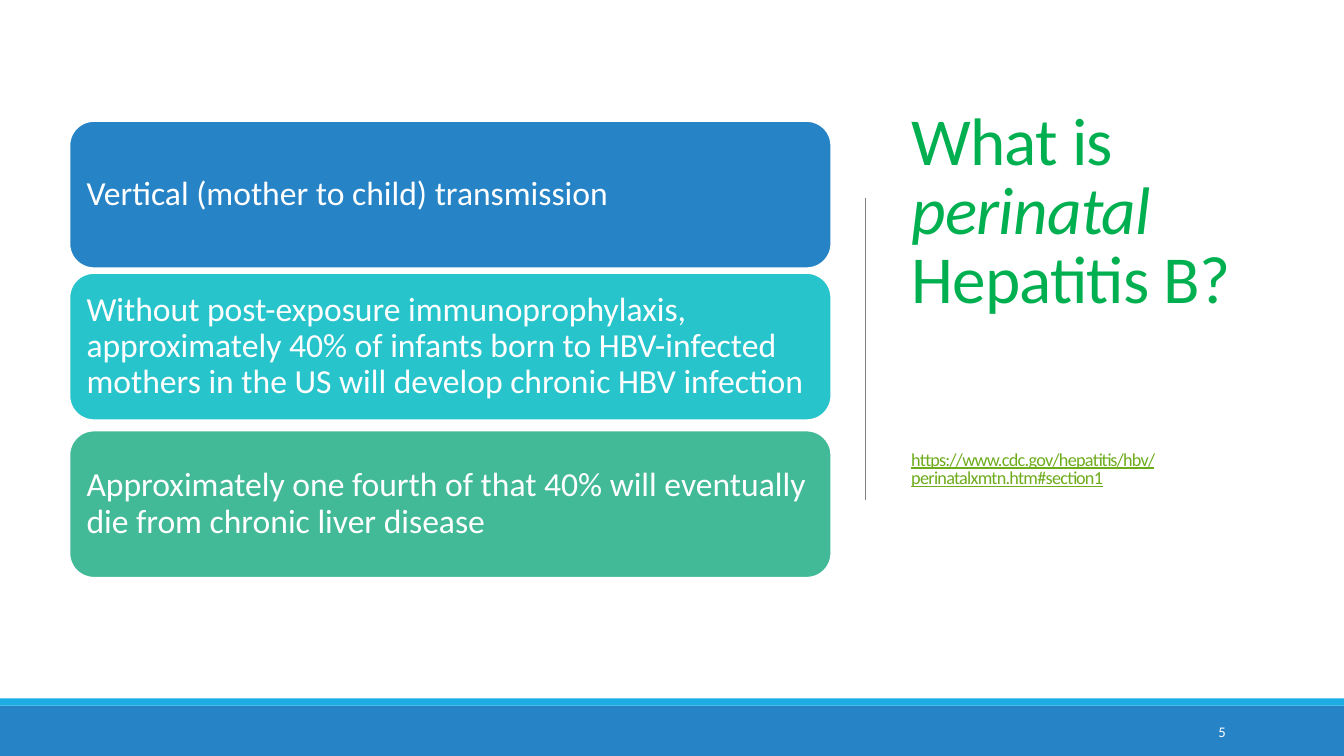
from lxml import etree
from pptx import Presentation
from pptx.dml.color import RGBColor
from pptx.enum import shapes, text
from pptx.oxml import ns
from pptx.util import Cm, Pt

BLUE = RGBColor(0x26, 0x83, 0xC6)
SKY = RGBColor(0x1C, 0xAD, 0xE4)
TURQUOISE = RGBColor(0x28, 0xC4, 0xCC)
TEAL = RGBColor(0x42, 0xBA, 0x97)
GREEN = RGBColor(0x00, 0xB0, 0x50)
LINK_GREEN = RGBColor(0x6E, 0xAC, 0x1C)
GREY = RGBColor(0x80, 0x80, 0x80)
WHITE = RGBColor(0xFF, 0xFF, 0xFF)

SLIDE_WIDTH = Cm(33.87)


def format_run(run, size, color):
    run.font.name = "Calibri"
    run.font.size = Pt(size)
    run.font.color.rgb = color


def add_filled_shape(kind, left, top, width, height, color):
    shape = slide.shapes.add_shape(kind, left, top, width, height)
    shape.shadow.inherit = False
    shape.fill.solid()
    shape.fill.fore_color.rgb = color
    shape.line.fill.background()
    return shape


presentation = Presentation()
presentation.slide_width = SLIDE_WIDTH
presentation.slide_height = Cm(19.05)
slide = presentation.slides.add_slide(presentation.slide_layouts[5])

# Footer bands
for top, height, color in ((17.78, 1.27, BLUE), (17.6, 0.18, SKY)):
    add_filled_shape(shapes.MSO_SHAPE.RECTANGLE, 0, Cm(top), SLIDE_WIDTH, Cm(height), color)

# Divider
divider = slide.shapes.add_connector(
    shapes.MSO_CONNECTOR.STRAIGHT, Cm(21.82), Cm(4.98), Cm(21.82), Cm(12.6))
divider.line.color.rgb = GREY
divider.line.width = Pt(0.5)
etree.SubElement(divider._element.spPr, ns.qn("a:effectLst"))

# Title with its source link
title = slide.shapes.title
title.left, title.top, title.width, title.height = Cm(22.71), Cm(1.75), Cm(9.37), Cm(14.05)
frame = title.text_frame
frame.word_wrap = True
frame.auto_size = text.MSO_AUTO_SIZE.NONE
frame.vertical_anchor = text.MSO_ANCHOR.TOP
frame.margin_top = Cm(1.05)
heading = frame.paragraphs[0]
for words in ("What is ", "perinatal", " Hepatitis B?"):
    run = heading.add_run()
    run.text = words
    format_run(run, 48, GREEN)
    run.font.italic = words == "perinatal"
source = frame.add_paragraph()
source.text = "https://www.cdc.gov/hepatitis/hbv/perinatalxmtn.htm#section1"
source.space_before = Pt(96)
format_run(source.runs[0], 13, LINK_GREEN)
source.runs[0].font.underline = True
for paragraph in frame.paragraphs:
    paragraph.alignment = text.PP_ALIGN.LEFT
    paragraph.line_spacing = 0.85
    for run in paragraph.runs:
        run.font._element.set("spc", "-50")

# Fact boxes
facts = (
    (3.05, BLUE, "Vertical (mother to child) transmission"),
    (6.88, TURQUOISE, "Without post-exposure immunoprophylaxis, approximately 40% of infants "
     "born to HBV-infected mothers in the US will develop chronic HBV infection"),
    (10.85, TEAL, "Approximately one fourth of that 40% will eventually die from "
     "chronic liver disease"),
)
for top, color, fact in facts:
    box = add_filled_shape(
        shapes.MSO_SHAPE.ROUNDED_RECTANGLE, Cm(1.75), Cm(top), Cm(19.2), Cm(3.71), color)
    box.line.color.rgb = WHITE
    box.line.width = Pt(1.25)
    frame = box.text_frame
    frame.word_wrap = True
    frame.vertical_anchor = text.MSO_ANCHOR.MIDDLE
    # The rounded corners already inset the text by about 0.18 cm
    frame.margin_left = frame.margin_right = Cm(0.25)
    frame.margin_top = frame.margin_bottom = Cm(0.25)
    paragraph = frame.paragraphs[0]
    paragraph.text = fact
    paragraph.alignment = text.PP_ALIGN.LEFT
    paragraph.line_spacing = 0.9
    format_run(paragraph.runs[0], 24, WHITE)

# Slide number
number = slide.shapes.add_textbox(Cm(27.51), Cm(17.93), Cm(3.63), Cm(1.02))
number.text_frame.word_wrap = True
number.text_frame.vertical_anchor = text.MSO_ANCHOR.MIDDLE
paragraph = number.text_frame.paragraphs[0]
paragraph.text = "5"
paragraph.alignment = text.PP_ALIGN.RIGHT
format_run(paragraph.runs[0], 10.5, WHITE)

presentation.save("out.pptx")
